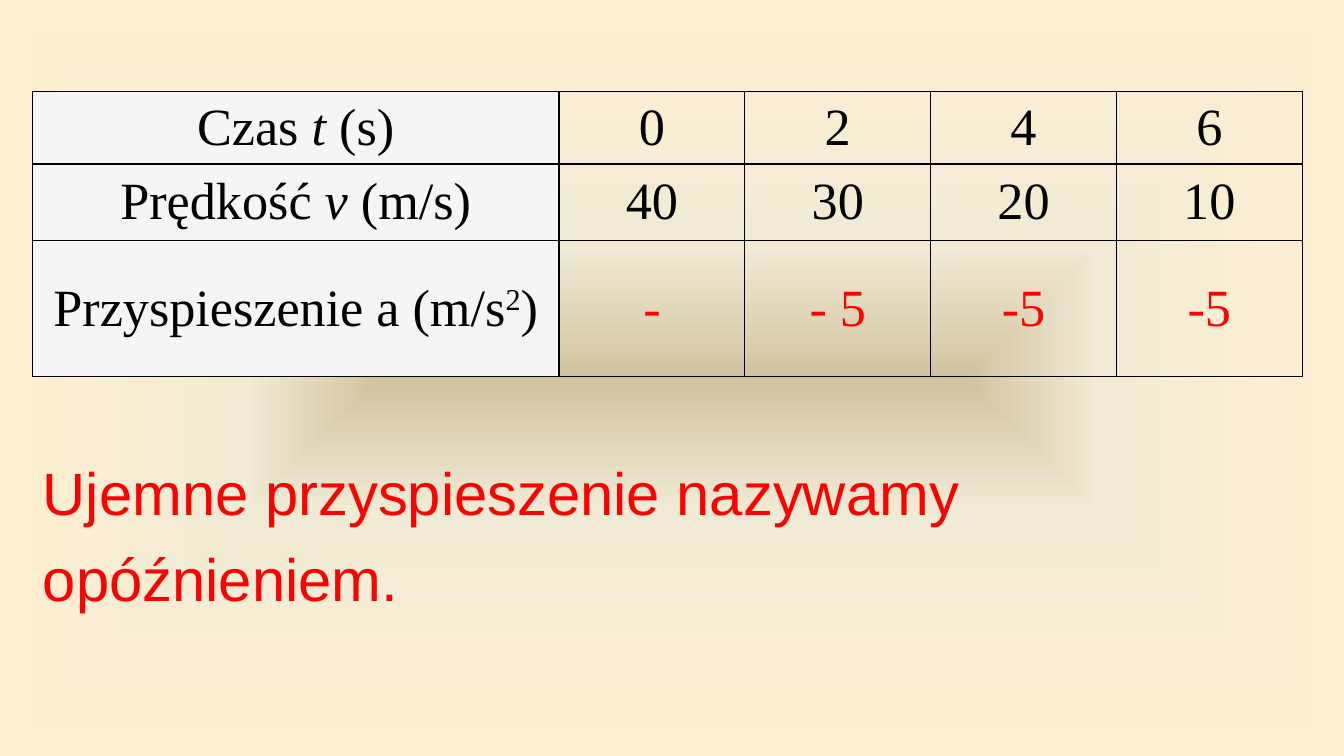
from lxml import etree
from pptx import Presentation
from pptx.dml.color import RGBColor
from pptx.enum.text import MSO_ANCHOR, PP_ALIGN
from pptx.oxml import parse_xml
from pptx.oxml.ns import qn
from pptx.util import Inches, Pt

MIDDLE = MSO_ANCHOR.MIDDLE
CENTER = PP_ALIGN.CENTER
NAMESPACE = "http://schemas.openxmlformats.org/drawingml/2006/main"

WIDTH = 10
HEIGHT = WIDTH * 9 / 16
BLACK, RED, LIGHT = "000000", "FF0000", "F5F5F5"
STOPS = [(0, "D1C39F"), (35, "F0EBD5"), (100, "FFEFD1")]

TABLE_WIDTH, LABEL_WIDTH = 9.45, 3.92
COLUMNS = [LABEL_WIDTH] + [(TABLE_WIDTH - LABEL_WIDTH) / 4] * 4
ROWS = [0.54, 0.57, 1.01]
# Each label is a list of (text, style) spans
LABELS = [
    [("Czas ", ""), ("t", "italic"), (" (s)", "")],
    [("Prędkość ", ""), ("v ", "italic"), ("(m/s)", "")],
    [("Przyspieszenie a (m/s", ""), ("2", "super"), (")", "")],
]
VALUES = [
    ["0", "2", "4", "6"],
    ["40", "30", "20", "10"],
    ["-", "- 5", "-5", "-5"],
]
VALUE_COLORS = [BLACK, BLACK, RED]


def color(value):
    return RGBColor.from_string(value)


def set_font(target, name, size, shade):
    target.font.name = name
    target.font.size = Pt(size)
    target.font.color.rgb = color(shade)


def paint_background(page):
    """Fill the page with a gradient that spreads from its centre."""
    page.background.fill.gradient()
    old = page.background._cSld.find(".//" + qn("a:gradFill"))
    stops = "".join(
        f'<a:gs pos="{share * 1000}"><a:srgbClr val="{shade}"/></a:gs>'
        for share, shade in STOPS
    )
    new = parse_xml(
        f'<a:gradFill xmlns:a="{NAMESPACE}" rotWithShape="1">'
        f"<a:gsLst>{stops}</a:gsLst>"
        '<a:path path="shape">'
        '<a:fillToRect l="50000" t="50000" r="50000" b="50000"/>'
        "</a:path></a:gradFill>"
    )
    old.getparent().replace(old, new)


def add_borders(cell):
    properties = cell._tc.get_or_add_tcPr()
    for index, side in enumerate(("lnL", "lnR", "lnT", "lnB")):
        line = etree.Element(qn("a:" + side), w=str(Pt(0.75)))
        solid = etree.SubElement(line, qn("a:solidFill"))
        etree.SubElement(solid, qn("a:srgbClr"), val=BLACK)
        properties.insert(index, line)


def fill_cell(cell, spans, shade, background=None):
    cell.vertical_anchor = MIDDLE
    cell.margin_left = cell.margin_right = Inches(0.1)
    cell.margin_top = cell.margin_bottom = Inches(0.04)
    if background:
        cell.fill.solid()
        cell.fill.fore_color.rgb = color(background)
    else:
        cell.fill.background()
    add_borders(cell)
    para = cell.text_frame.paragraphs[0]
    para.alignment = CENTER
    for text, style in spans:
        span = para.add_run()
        span.text = text
        # Table styles can override paragraph defaults, so spans carry the font
        set_font(span, "Times New Roman", 28, shade)
        if style == "italic":
            span.font.italic = True
        elif style == "super":
            span.font._element.set("baseline", "30000")


def add_motion_table(page):
    frame = page.shapes.add_table(
        len(ROWS), len(COLUMNS), Inches(0.24), Inches(0.68),
        Inches(TABLE_WIDTH), Inches(sum(ROWS)),
    )
    table = frame.table
    table.first_row = table.horz_banding = False
    for column, width in zip(table.columns, COLUMNS):
        column.width = Inches(width)
    for row, height, label, values, shade in zip(
        table.rows, ROWS, LABELS, VALUES, VALUE_COLORS
    ):
        row.height = Inches(height)
        fill_cell(row.cells[0], label, BLACK, LIGHT)
        for index, value in enumerate(values, start=1):
            fill_cell(row.cells[index], [(value, "")], shade)


def add_conclusion(page, text):
    box = page.shapes.add_textbox(
        Inches(0.22), Inches(3.33), Inches(9.45), Inches(1.31)
    )
    frame = box.text_frame
    frame.word_wrap = True
    frame.vertical_anchor = MIDDLE
    frame.margin_bottom = Inches(0.17)
    para = frame.paragraphs[0]
    para.text = text
    para.line_spacing = 1.2
    set_font(para, "Arial", 32, RED)


def main():
    deck = Presentation()
    deck.slide_width, deck.slide_height = Inches(WIDTH), Inches(HEIGHT)
    page = deck.slides.add_slide(deck.slide_layouts[6])
    paint_background(page)
    add_motion_table(page)
    add_conclusion(page, "Ujemne przyspieszenie nazywamy opóźnieniem.")
    deck.save("out.pptx")


if __name__ == "__main__":
    main()
